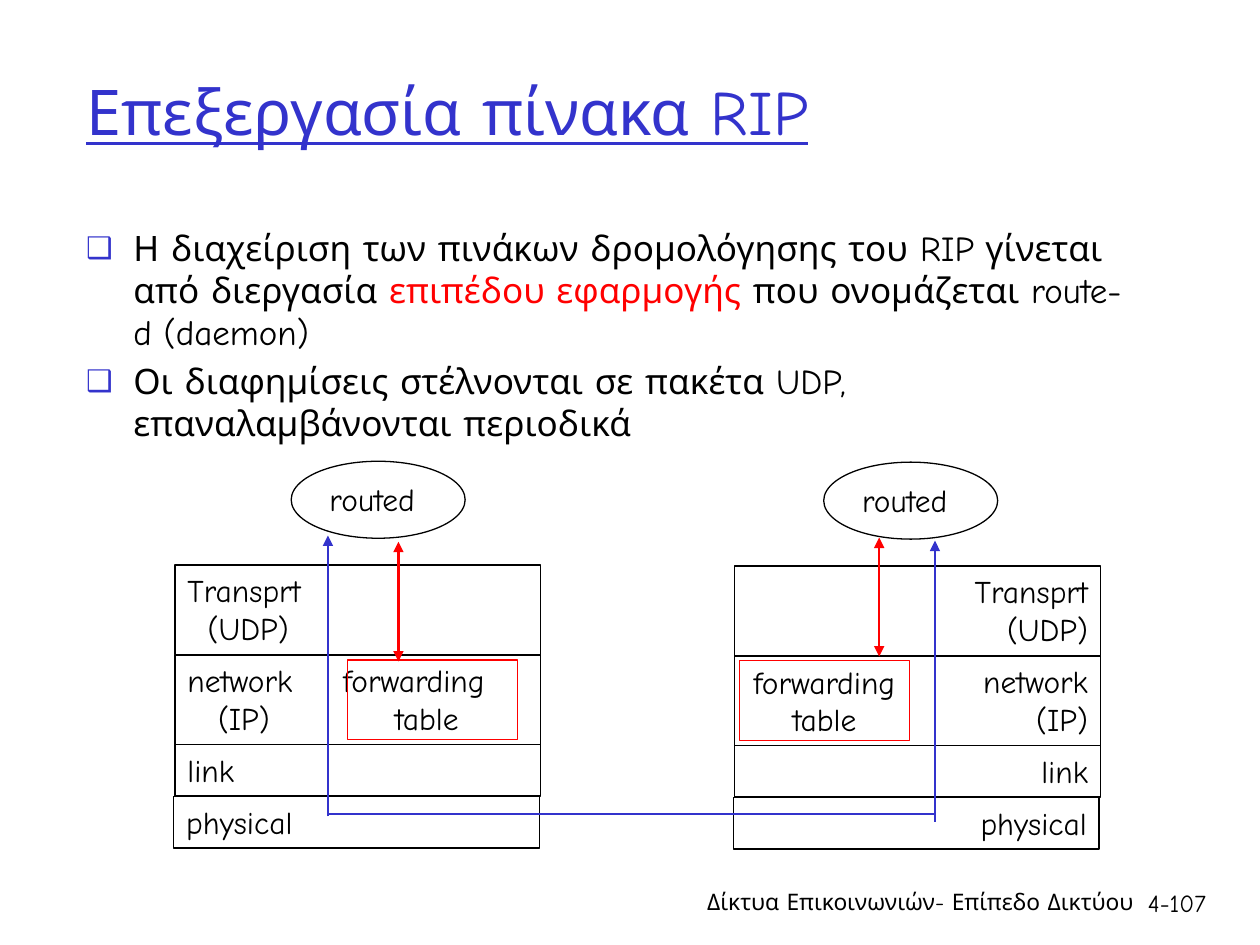
from lxml import etree
from pptx import Presentation
from pptx.dml.color import RGBColor
from pptx.enum.shapes import MSO_CONNECTOR, MSO_SHAPE
from pptx.enum.text import MSO_ANCHOR, MSO_AUTO_SIZE, PP_ALIGN
from pptx.oxml.ns import qn
from pptx.util import Pt

BLACK = RGBColor(0, 0, 0)
BLUE = RGBColor(0x33, 0x33, 0xCC)
RED = RGBColor(0xFF, 0, 0)
FONT = "Comic Neue"
RECT, OVAL = MSO_SHAPE.RECTANGLE, MSO_SHAPE.OVAL
LINE = MSO_CONNECTOR.STRAIGHT
LEFT, MID, RIGHT = PP_ALIGN.LEFT, PP_ALIGN.CENTER, PP_ALIGN.RIGHT
TOP, CENTER = MSO_ANCHOR.TOP, MSO_ANCHOR.MIDDLE
FIXED = MSO_AUTO_SIZE.NONE

# Layers of one stack: name, detail, indent of detail, top, height
LAYERS = [
    ("physical", None, 0, 455.2, 29.4),
    ("link", None, 0, 425.5, 29.4),
    ("network", "(IP)", 17.5, 374.3, 51.3),
    ("Transprt", "(UDP)", 11.6, 322.8, 51.3),
]
WIDE = 209


def write(shape, paras, size=18, color=BLACK, align=LEFT, anchor=TOP,
          wrap=True, under=None, gap=0, dents=(), tabs=(), mark=None):
    """Each paragraph is a string or a list of (text, color) runs."""
    frame = shape.text_frame
    frame.auto_size = FIXED
    frame.word_wrap = wrap
    frame.vertical_anchor = anchor
    for i, runs in enumerate(paras):
        para = frame.paragraphs[0] if i == 0 else frame.add_paragraph()
        para.alignment = align
        para.space_before = Pt(gap if i else 0)
        props = para._p.get_or_add_pPr()
        if mark:
            bullet(props, mark)
        if i < len(dents) and dents[i]:
            props.set("marL", str(Pt(dents[i])))
        if i < len(tabs):
            stops = etree.SubElement(props, qn("a:tabLst"))
            for pos in tabs[i]:
                etree.SubElement(stops, qn("a:tab"), pos=str(Pt(pos)), algn="l")
        for text, tint in [(runs, color)] if isinstance(runs, str) else runs:
            run = para.add_run()
            run.text = text
            run.font.name = FONT
            run.font.size = Pt(size)
            run.font.underline = under
            run.font.color.rgb = tint


def bullet(props, mark):
    props.set("marL", str(Pt(27)))
    props.set("indent", str(Pt(-27)))
    tint = etree.SubElement(props, qn("a:buClr"))
    etree.SubElement(tint, qn("a:srgbClr"), val=str(BLUE))
    etree.SubElement(props, qn("a:buSzPct"), val="85000")
    etree.SubElement(props, qn("a:buChar"), char=mark)


def place(shape, x, y, w, h):
    shape.left, shape.top, shape.width, shape.height = Pt(x), Pt(y), Pt(w), Pt(h)
    return shape


def label(slide, x, y, w, h, text, **form):
    box = slide.shapes.add_textbox(Pt(x), Pt(y), Pt(w), Pt(h))
    write(box, [text], **form)


def outline(slide, kind, x, y, w, h, color=BLACK):
    shape = slide.shapes.add_shape(kind, Pt(x), Pt(y), Pt(w), Pt(h))
    shape.shadow.inherit = False
    shape.fill.background()
    shape.line.color.rgb = color
    shape.line.width = Pt(0.75)
    return shape


def link(slide, x1, y1, x2, y2, color, ends=()):
    wire = slide.shapes.add_connector(LINE, Pt(x1), Pt(y1), Pt(x2), Pt(y2))
    wire.line.color.rgb = color
    wire.line.width = Pt(1.5)
    for end in ends:
        etree.SubElement(wire.line._get_or_add_ln(), qn("a:" + end), type="triangle")
    etree.SubElement(wire._element.spPr, qn("a:effectLst"))


def stack(slide, x, dy, align):
    """Draw the four protocol layers of one host."""
    for name, note, dent, top, high in LAYERS:
        shift = -0.7 if name == "physical" else 0
        box = outline(slide, RECT, x + shift, top + dy, WIDE, high)
        if align == RIGHT:
            write(box, [name, note] if note else [name], align=align)
        elif name == "network":
            # The left host names its forwarding table in the layer itself
            write(box, [name + "\tforwarding", "\t" + note + "\ttable"],
                  tabs=[(89,), (dent, 118.5)])
        else:
            write(box, [name, note] if note else [name], dents=(0, dent))


def daemon(slide, x, y):
    outline(slide, OVAL, x, y, 99.4, 44)
    label(slide, x + 14.8, y + 7.2, 71, 29, "routed", wrap=False)


def main():
    deck = Presentation()
    deck.slide_width, deck.slide_height = Pt(720), Pt(540)
    slide = deck.slides.add_slide(deck.slide_layouts[1])

    # Title and list
    title = place(slide.shapes.title, 42, 18, 612, 90)
    write(title, ["Επεξεργασία πίνακα RIP"], size=36, color=BLUE,
          anchor=CENTER, under=True)
    body = place(slide.placeholders[1], 42, 126, 612, 366)
    write(body, [
        [("Η διαχείριση των πινάκων δρομολόγησης του RIP γίνεται από διεργασία ", BLACK),
         ("επιπέδου εφαρμογής", RED),
         (" που ονομάζεται route-d (daemon)", BLACK)],
        "Οι διαφημίσεις στέλνονται σε πακέτα UDP, επαναλαμβάνονται περιοδικά",
    ], size=20, gap=4, mark="❑")

    # Left host
    stack(slide, 100, 0, LEFT)
    outline(slide, RECT, 198.7, 377.2, 97.2, 45.4, RED)
    daemon(slide, 166.4, 263.6)
    link(slide, 187.4, 466.5, 187.4, 306, BLUE, ["tailEnd"])

    # Right host
    stack(slide, 419.8, 0.6, RIGHT)
    daemon(slide, 470.7, 264.1)
    link(slide, 534.3, 469.5, 534.3, 309, BLUE, ["tailEnd"])
    table = outline(slide, RECT, 422.5, 377.6, 97.2, 45.4, RED)
    write(table, ["forwarding", "table"], align=MID, anchor=CENTER, wrap=False)

    # Wire between hosts, and table access
    link(slide, 187.4, 465.1, 534.6, 465.1, BLUE)
    for x, y1, y2 in [(227.7, 309.6, 378), (502.4, 307.2, 375.2)]:
        link(slide, x, y1, x, y2, RED, ["headEnd", "tailEnd"])

    # Footer
    label(slide, 380, 504, 274.5, 36, "Δίκτυα Επικοινωνιών- Επίπεδο Δικτύου",
          size=13, align=RIGHT)
    label(slide, 643, 504, 53.3, 36, "4-107", size=14, align=RIGHT)

    deck.save("out.pptx")


if __name__ == "__main__":
    main()
